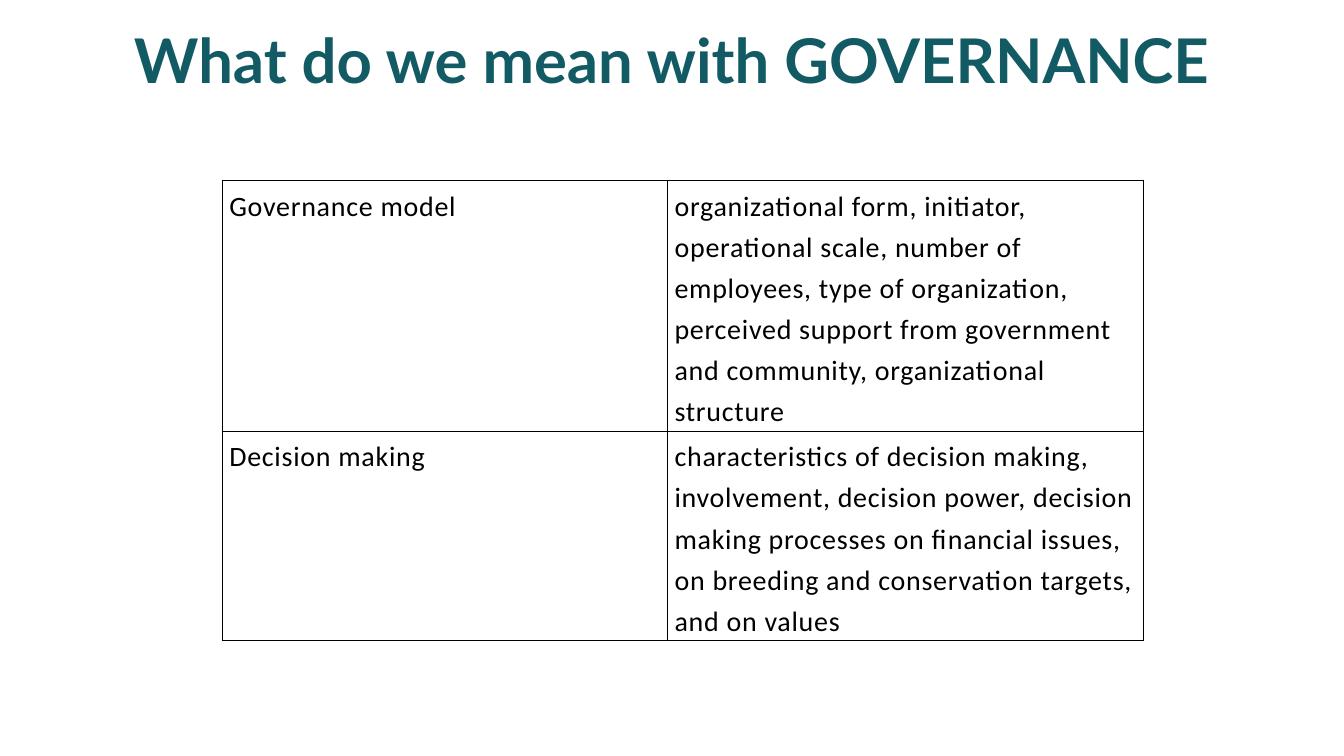
from lxml import etree
from pptx import Presentation
from pptx import util as u
from pptx.dml.color import RGBColor
from pptx.enum import text
from pptx.oxml import ns

COLOURS = {"title": "135B64", "ink": "000000"}
TOPICS = [
    ("Governance model",
     "organizational form, initiator, operational scale, number of employees, "
     "type of organization, perceived support from government and community, "
     "organizational structure"),
    ("Decision making",
     "characteristics of decision making, involvement, decision power, decision "
     "making processes on financial issues, on breeding and conservation targets, "
     "and on values"),
]


def style_font(font, name, size, colour, bold=False):
    font.name = name
    font.size = u.Pt(size)
    font.bold = bold
    font.color.rgb = RGBColor.from_string(COLOURS[colour])


def add_title(page, left, top, width, height):
    title = page.shapes.title
    title.left, title.top, title.width, title.height = left, top, width, height
    frame = title.text_frame
    frame.text = "What do we mean with GOVERNANCE"
    frame.auto_size = text.MSO_AUTO_SIZE.NONE
    frame.vertical_anchor = text.MSO_ANCHOR.MIDDLE
    para = frame.paragraphs[0]
    para.alignment = text.PP_ALIGN.CENTER
    para.line_spacing = 0.9
    style_font(para.runs[0].font, "Lato", 44, "title", bold=True)


def add_borders(cell):
    properties = cell._tc.get_or_add_tcPr()
    for side in ("lnL", "lnR", "lnT", "lnB"):
        line = etree.SubElement(properties, ns.qn(f"a:{side}"), w=str(u.Pt(1)))
        fill = etree.SubElement(line, ns.qn("a:solidFill"))
        etree.SubElement(fill, ns.qn("a:srgbClr"), val=COLOURS["ink"])


def fill_cell(cell, wording):
    cell.margin_left = cell.margin_right = u.Cm(0.18)
    cell.margin_top = cell.margin_bottom = u.Cm(0.05)
    add_borders(cell)
    cell.fill.background()
    cell.text_frame.text = wording
    para = cell.text_frame.paragraphs[0]
    para.line_spacing = 1.2
    font = para.runs[0].font
    style_font(font, "Calibri", 20, "ink")
    font._element.set("spc", "50")


def add_topics(page, left, top, width, height):
    table = page.shapes.add_table(len(TOPICS), 2, left, top, width, height).table
    table.first_row = False
    table.horz_banding = False
    table.columns[0].width = u.Cm(11.22)
    table.columns[1].width = width - u.Cm(11.22)
    for row, topic in enumerate(TOPICS):
        for column, wording in enumerate(topic):
            fill_cell(table.cell(row, column), wording)


def main():
    deck = Presentation()
    deck.slide_width = u.Cm(33.87)
    deck.slide_height = u.Cm(19.05)
    page = deck.slides.add_slide(deck.slide_layouts[5])
    add_title(page, u.Cm(0), u.Cm(0.05), deck.slide_width, u.Cm(3.12))
    add_topics(page, u.Cm(5.6), u.Cm(4.55), u.Cm(23.22), u.Cm(8.78))
    deck.save("out.pptx")


if __name__ == "__main__":
    main()
